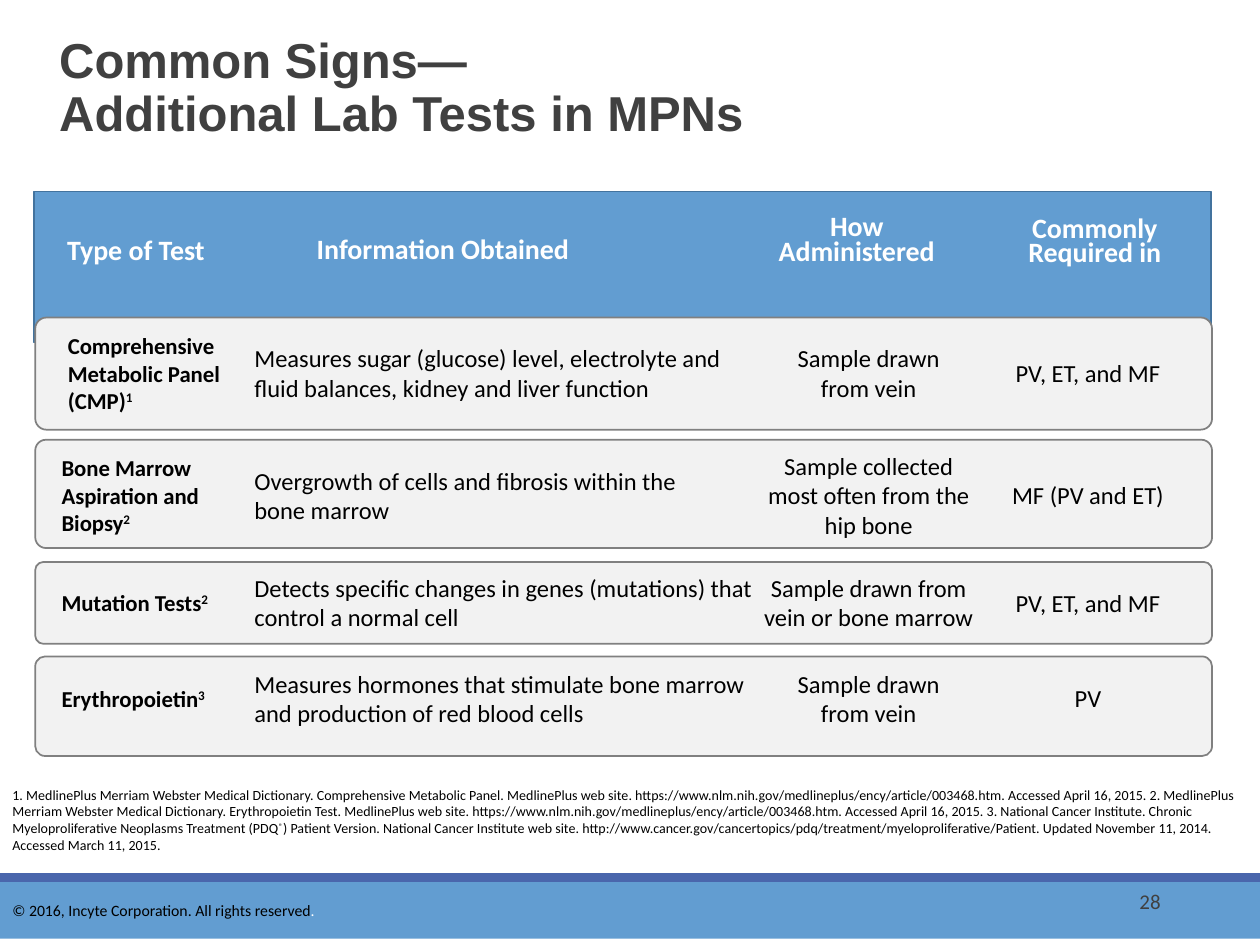
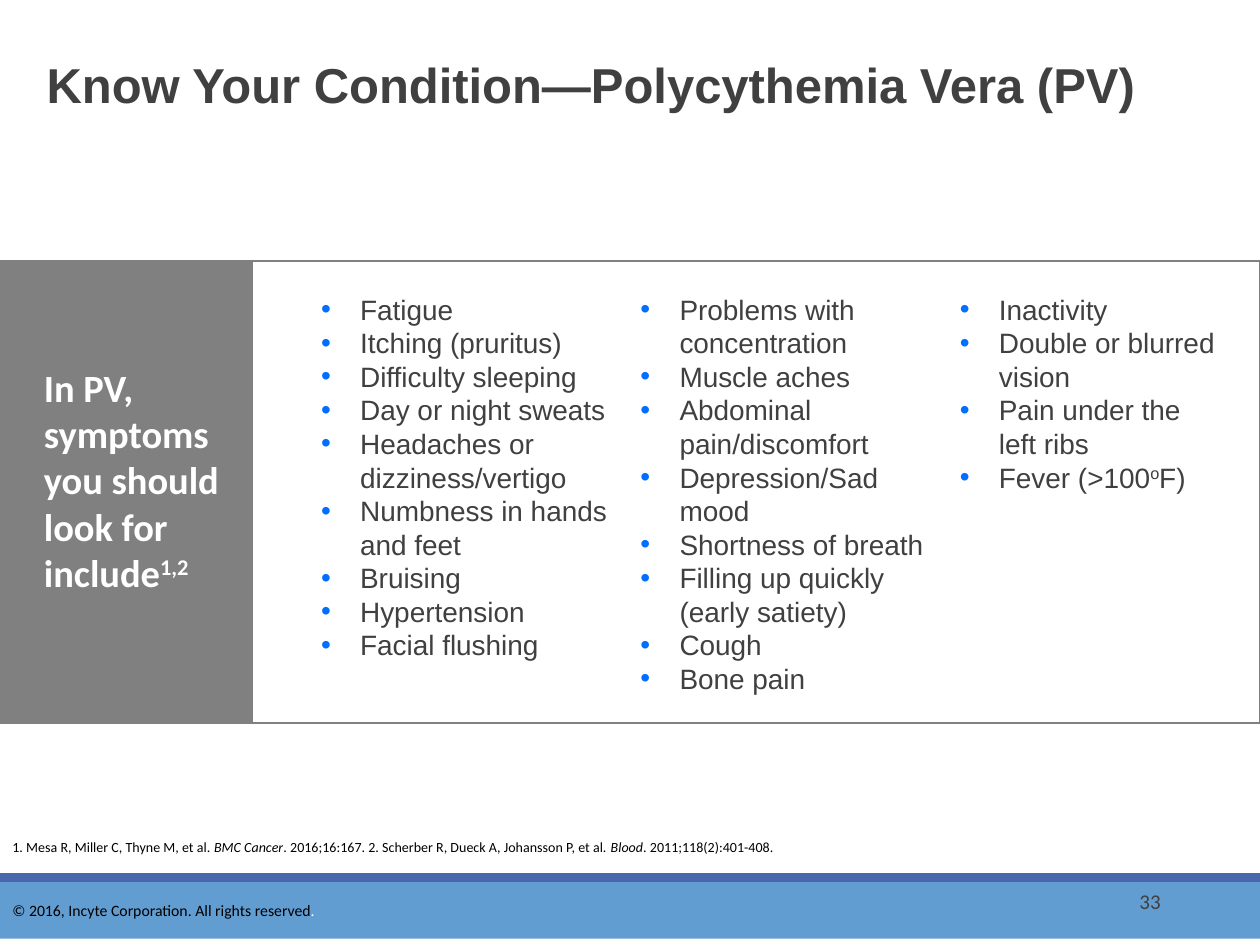
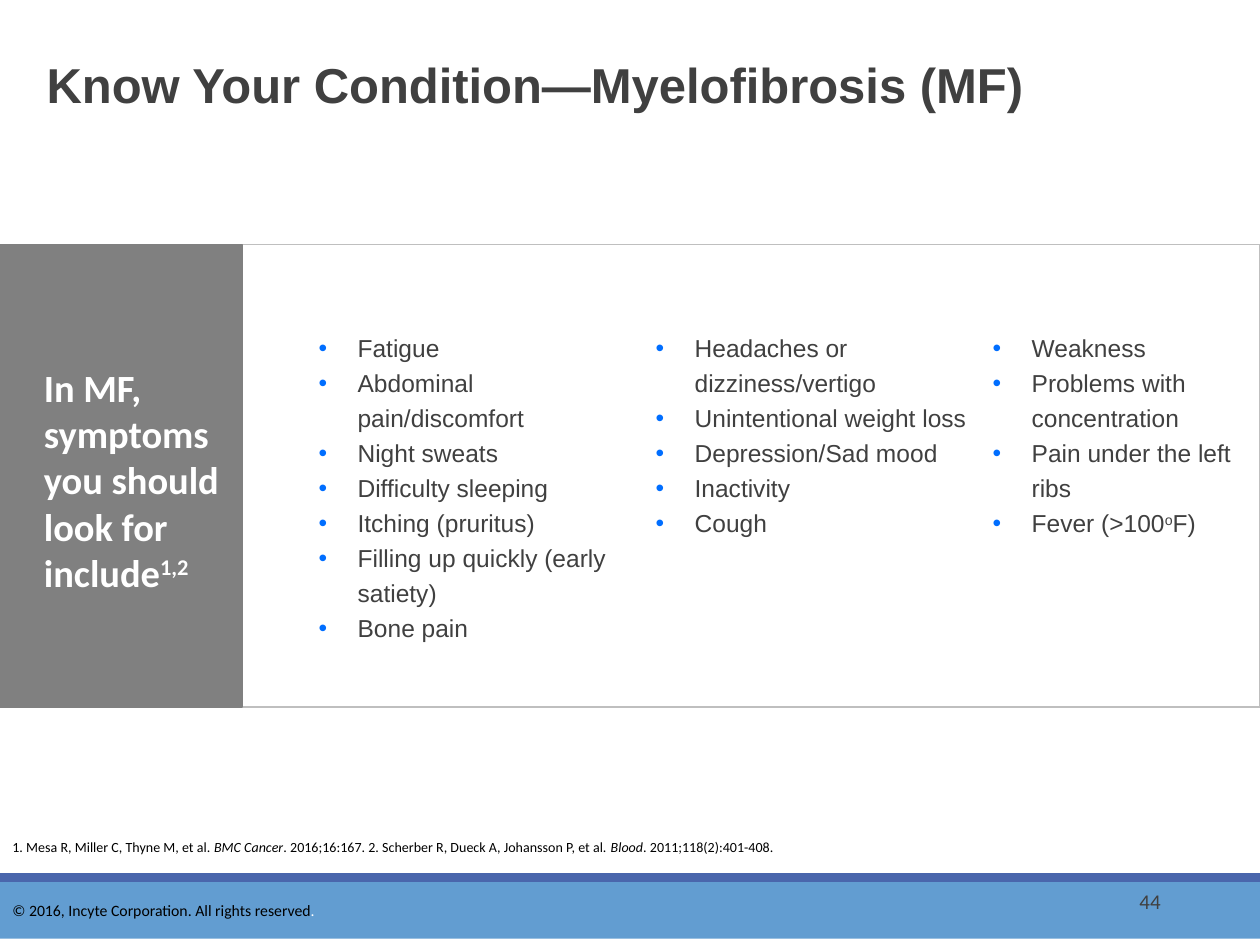
from lxml import etree
from pptx import Presentation
from pptx.dml.color import RGBColor
from pptx.enum.shapes import MSO_SHAPE
from pptx.enum.text import MSO_ANCHOR, PP_ALIGN
from pptx.oxml.ns import qn
from pptx.util import Inches, Pt

HUES = {
    "blue": "629DD1", "navy": "4A66AC", "edge": "43739E", "dot": "006EFF",
    "text": "404040", "black": "000000", "white": "FFFFFF",
    "gray": "808080", "light": "BFBFBF", "pale": "F2F2F2",
}
INK = {name: RGBColor.from_string(code) for name, code in HUES.items()}
LEFT, MID, RIGHT = PP_ALIGN.LEFT, PP_ALIGN.CENTER, PP_ALIGN.RIGHT
TOP, HALF = MSO_ANCHOR.TOP, MSO_ANCHOR.MIDDLE
RECT, ROUND = MSO_SHAPE.RECTANGLE, MSO_SHAPE.ROUNDED_RECTANGLE

deck = Presentation()
deck.slide_width, deck.slide_height = Inches(10), Inches(7.5)
COL, ROW = deck.slide_width / 100, deck.slide_height / 75


def draw(slide, kind, at, fill=None, line=None):
    x, y, w, h = at
    spot = [int(x * COL), int(y * ROW), int(w * COL), int(h * ROW)]
    if kind is None:
        return slide.shapes.add_textbox(*spot)
    shape = slide.shapes.add_shape(kind, *spot)
    shape.shadow.inherit = False
    if fill:
        shape.fill.solid()
        shape.fill.fore_color.rgb = INK[fill]
    else:
        shape.fill.background()
    if line:
        shape.line.color.rgb = INK[line]
        shape.line.width = Pt(1)
    else:
        shape.line.fill.background()
    return shape


def write(shape, text, size, hue="black", bold=False, font="Calibri",
          align=LEFT, anchor=TOP, lead=None, dots=False):
    frame = shape.text_frame
    frame.word_wrap = True
    frame.vertical_anchor = anchor
    frame.text = text
    for para in frame.paragraphs:
        first, *rest = para.text.split("|")
        para.text = first
        for part in rest:
            run = para.add_run()
            run.text = part.lstrip("^/")
            if part[0] == "^":
                run.font._element.set("baseline", "30000")
            elif part[0] == "/":
                run.font.italic = True
        para.alignment = align
        if lead:
            para.line_spacing = lead
        if dots:
            props = para._p.get_or_add_pPr()
            props.set("marL", str(Inches(0.31)))
            props.set("indent", str(-Inches(0.31)))
            tint = etree.SubElement(props, qn("a:buClr"))
            etree.SubElement(tint, qn("a:srgbClr"), val=HUES["dot"])
            etree.SubElement(props, qn("a:buFont"), typeface="Arial")
            etree.SubElement(props, qn("a:buChar"), char="•")
        for run in para.runs:
            run.font.size = Pt(size)
            run.font.name = font
            run.font.bold = bold
            run.font.color.rgb = INK[hue]


STUDY = ("1. Mesa R, Miller C, Thyne M, et al. |/BMC Cancer|. 2016;16:167. "
         "2. Scherber R, Dueck A, Johansson P, et al. |/Blood|. 2011;118(2):401-408.")
SITES = (
    "1. MedlinePlus Merriam Webster Medical Dictionary. Comprehensive Metabolic Panel. "
    "MedlinePlus web site. https://www.nlm.nih.gov/medlineplus/ency/article/003468.htm. "
    "Accessed April 16, 2015. 2. MedlinePlus Merriam Webster Medical Dictionary. "
    "Erythropoietin Test. MedlinePlus web site. "
    "https://www.nlm.nih.gov/medlineplus/ency/article/003468.htm. Accessed April 16, 2015. "
    "3. National Cancer Institute. Chronic Myeloproliferative Neoplasms Treatment (PDQ|^®|) "
    "Patient Version. National Cancer Institute web site. "
    "http://www.cancer.gov/cancertopics/pdq/treatment/myeloproliferative/Patient. "
    "Updated November 11, 2014. Accessed March 11, 2015."
)
PAGES = [
    ("Common Signs—\vAdditional Lab Tests in MPNs", (3.7, 2), "28", SITES, 61.9),
    ("Know Your Condition—Polycythemia Vera (PV)", (2.7, 1.9), "33", STUDY, 66.1),
    ("Know Your Condition—Myelofibrosis (MF)", (2.7, 1.9), "44", STUDY, 66.1),
]

plain = deck.slide_layouts[5]
slides = []
for title, (x, y), number, source, low in PAGES:
    slide = deck.slides.add_slide(plain)
    head = slide.shapes.title
    head.left, head.top = int(x * COL), int(y * ROW)
    head.width, head.height = int(89.5 * COL), int(10.1 * ROW)
    write(head, title, 28, "text", True, "Arial", anchor=HALF, lead=0.9)
    write(draw(slide, None, (70.6, 69.5, 22.5, 4)), number, 12, "text",
          align=RIGHT, anchor=HALF)
    write(draw(slide, None, (0, low, 100, 6.4)), source, 8)
    slides.append(slide)
labs, *signs = slides

band = draw(labs, RECT, (0, 69.5, 100, 5), "blue")
write(band, "© 2016, Incyte Corporation. All rights reserved|.", 9, anchor=HALF)
band.text_frame.margin_top = Inches(0.1)
band.text_frame.paragraphs[0].runs[-1].font.color.rgb = INK["white"]
strip = draw(labs, RECT, (0, 69.3, 100, 0.7), "navy")
for shape in (band, strip):
    plain.shapes.element.append(shape.element)

draw(labs, RECT, (2.7, 15.2, 93.4, 12), "blue", "edge")
HEADS = [
    ("Type of Test", 0, 18, 21.6, None),
    ("Information Obtained", 20.9, 17.9, 28.5, None),
    ("How\nAdministered", 57.2, 16.8, 21.6, Pt(14)),
    ("Commonly\nRequired in", 76.1, 16.9, 21.6, Pt(14)),
]
for text, x, y, w, lead in HEADS:
    write(draw(labs, None, (x, y, w, 5.3)), text, 16, "white", True,
          align=MID, lead=lead)

TESTS = [
    (25.2, 8.9, 29.6, 4.4, "Comprehensive Metabolic Panel (CMP)|^1",
     "Measures sugar (glucose) level, electrolyte and fluid balances, kidney and liver function",
     "Sample drawn\nfrom vein", "PV, ET, and MF"),
    (34.9, 8.6, 39.3, 3.9, "Bone Marrow Aspiration and Biopsy|^2",
     "Overgrowth of cells and fibrosis within the\nbone marrow",
     "Sample collected most often from the hip bone", "MF (PV and ET)"),
    (44.6, 6.5, 47.8, 3.9, "Mutation Tests|^2",
     "Detects specific changes in genes (mutations) that control a normal cell",
     "Sample drawn from vein or bone marrow", "PV, ET, and MF"),
    (52.1, 7.9, 55.4, 3.9, "Erythropoietin|^3",
     "Measures hormones that stimulate bone marrow and production of red blood cells",
     "Sample drawn\nfrom vein", "PV"),
]
for y, h, mid, left, name, *facts in TESTS:
    card = draw(labs, ROUND, (2.8, y, 93.4, h), "pale", "gray")
    card.adjustments[0] = 0.1
    top = mid - 4.3
    write(draw(labs, None, (left, top, 15.4, 8.6)), name, 13, bold=True, anchor=HALF)
    for fact, x, w, align in zip(facts, (19.2, 59.1, 76.5), (42.2, 19.7, 19.7),
                                 (LEFT, MID, MID)):
        write(draw(labs, None, (x, top, w, 8.6)), fact, 14, align=align, anchor=HALF)

FEVER = "Fever (>100|^o|F)"
SIGNS = [
    ("PV", 20, 20.7, "gray", 24.5, 25.35, 22.7, 16, None, [
        ["Fatigue", "Itching (pruritus)", "Difficulty sleeping", "Day or night sweats",
         "Headaches or dizziness/vertigo", "Numbness in hands and feet", "Bruising",
         "Hypertension", "Facial flushing"],
        ["Problems with concentration", "Muscle aches", "Abdominal pain/discomfort",
         "Depression/Sad mood", "Shortness of breath",
         "Filling up quickly (early satiety)", "Cough", "Bone pain"],
        ["Inactivity", "Double or blurred vision", "Pain under the left ribs", FEVER],
    ]),
    ("MF", 19.2, 19.4, "light", 24.3, 26.75, 25.5, 14, Pt(20), [
        ["Fatigue", "Abdominal pain/discomfort", "Night sweats", "Difficulty sleeping",
         "Itching (pruritus)", "Filling up quickly (early satiety)", "Bone pain"],
        ["Headaches or dizziness/vertigo", "Unintentional weight loss",
         "Depression/Sad mood", "Inactivity", "Cough"],
        ["Weakness", "Problems with concentration", "Pain under the left ribs", FEVER],
    ]),
]
for slide, sign in zip(signs, SIGNS):
    name, split, top, edge, left, step, y, size, lead, lists = sign
    draw(slide, RECT, (split, top, 100 - split, 36.7), None, edge)
    draw(slide, RECT, (0, top, split, 36.7), "gray", "gray")
    write(draw(slide, None, (2.5, 28.4, 16.5, 19.5)),
          f"In {name}, symptoms you should look for include|^1,2", 22, "white", True)
    for i, (items, w) in enumerate(zip(lists, (25.8, 26.7, 23))):
        write(draw(slide, None, (left + i * step, y, w, 31)), "\n".join(items),
              size, "text", font="Arial", lead=lead, dots=True)

deck.save("out.pptx")
